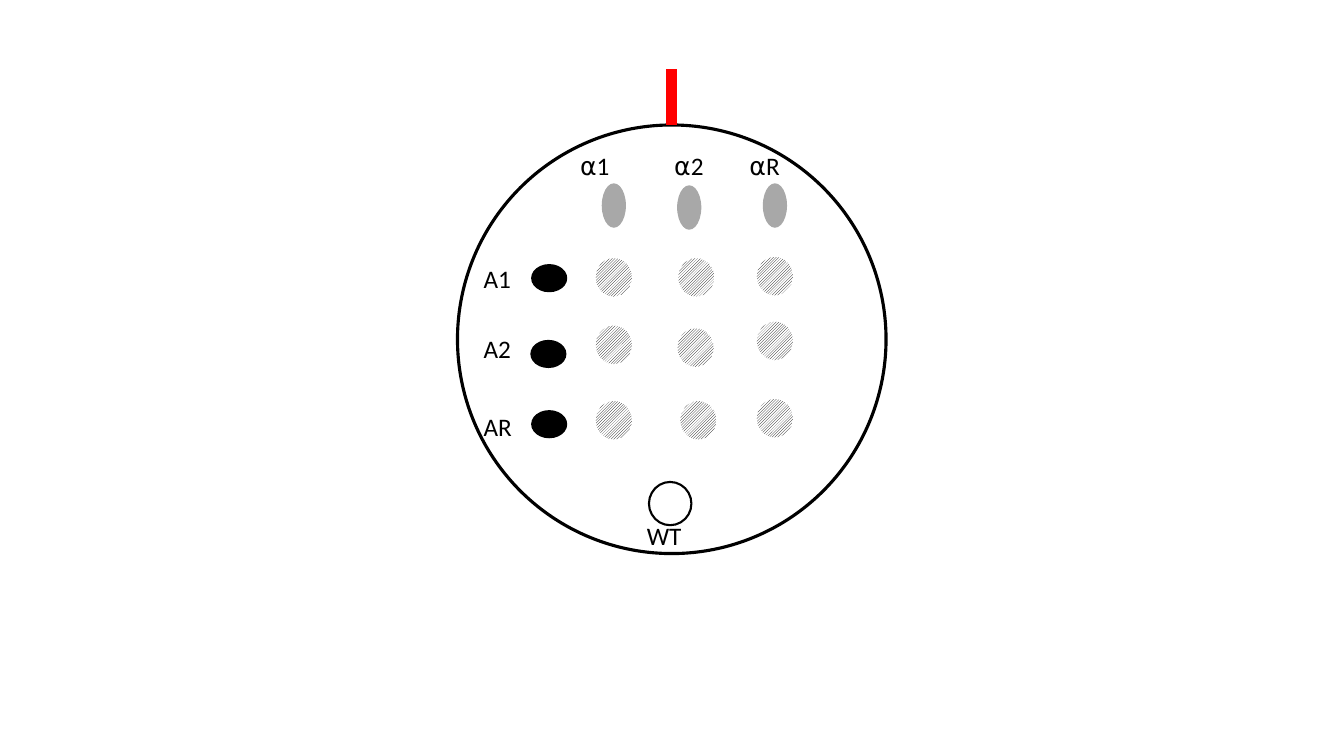
from dataclasses import dataclass

from lxml.etree import SubElement
from pptx import Presentation
from pptx.dml.color import RGBColor
from pptx.enum.dml import MSO_PATTERN
from pptx.enum.shapes import MSO_CONNECTOR, MSO_SHAPE
from pptx.enum.text import MSO_AUTO_SIZE, PP_ALIGN
from pptx.oxml.ns import qn
from pptx.util import Cm, Pt


@dataclass(frozen=True)
class Theme:
    ink: RGBColor = RGBColor(0, 0, 0)
    paper: RGBColor = RGBColor(255, 255, 255)
    mark: RGBColor = RGBColor(255, 0, 0)
    font: str = "Calibri"
    label: Pt = Pt(18)
    plate_line: Pt = Pt(2.25)
    spot_line: Pt = Pt(1.5)
    mark_line: Pt = Pt(7.75)


class PlateSlide:
    """Draws spots by their centres and labels by their corners, in cm."""

    def __init__(self, slide, theme):
        self.slide, self.theme = slide, theme

    def oval(self, center, size, line=None):
        (cx, cy), (w, h) = center, size
        sp = self.slide.shapes.add_shape(
            MSO_SHAPE.OVAL, Cm(cx - w / 2), Cm(cy - h / 2), Cm(w), Cm(h))
        sp.shadow.inherit = False
        sp.fill.background()
        if line is None:
            sp.line.fill.background()
        else:
            sp.line.color.rgb = self.theme.ink
            sp.line.width = line
        return sp

    def solid_oval(self, center, size, opacity=100):
        sp = self.oval(center, size)
        sp.fill.solid()
        sp.fill.fore_color.rgb = self.theme.ink
        if opacity < 100:
            color = sp.fill._xPr.find(qn("a:solidFill"))[0]
            SubElement(color, qn("a:alpha"), val=str(opacity * 1000))
        return sp

    def hatched_oval(self, center, size):
        sp = self.oval(center, size)
        sp.fill.patterned()
        sp.fill.pattern = MSO_PATTERN.LIGHT_UPWARD_DIAGONAL
        sp.fill.fore_color.rgb = self.theme.ink
        sp.fill.back_color.rgb = self.theme.paper

    def label(self, text, left, top, width, align=PP_ALIGN.LEFT):
        sp = self.slide.shapes.add_textbox(Cm(left), Cm(top), Cm(width), Cm(1.24))
        tf = sp.text_frame
        tf.word_wrap = True
        tf.auto_size = MSO_AUTO_SIZE.SHAPE_TO_FIT_TEXT
        p = tf.paragraphs[0]
        p.alignment = align
        r = p.add_run()
        r.text = text
        r.font.name = self.theme.font
        r.font.size = self.theme.label
        r.font.color.rgb = self.theme.ink

    def mark_above(self, sp, length):
        """Draw the orientation mark down to the top of a shape."""
        x = sp.left + sp.width // 2
        line = self.slide.shapes.add_connector(
            MSO_CONNECTOR.STRAIGHT, x, sp.top - Cm(length), x, sp.top)
        line.end_connect(sp, 0)
        line.line.color.rgb = self.theme.mark
        line.line.width = self.theme.mark_line
        SubElement(line._element.spPr, qn("a:effectLst"))


# text, label centre x, label width, spot centre
ALPHA_COLUMNS = [
    ("⍺1", 14.99, 1.78, (15.47, 5.18)),
    ("⍺2", 17.36, 2.11, (17.37, 5.23)),
    ("⍺R", 19.27, 2.11, (19.53, 5.18)),
]
# text, label top, spot centre, centres of the hatched spots
A_ROWS = [
    ("A1", 6.5, (13.84, 7.01), [(15.47, 6.99), (17.55, 6.99), (19.53, 6.96)]),
    ("A2", 8.28, (13.82, 8.92), [(15.47, 8.69), (17.53, 8.76), (19.53, 8.59)]),
    ("AR", 10.24, (13.84, 10.69), [(15.47, 10.59), (17.6, 10.59), (19.53, 10.54)]),
]
LABEL_WIDTH = 1.91


def main():
    prs = Presentation()
    prs.slide_width, prs.slide_height = Cm(33.87), Cm(19.05)
    theme = Theme()
    s = PlateSlide(prs.slides.add_slide(prs.slide_layouts[6]), theme)

    plate = s.oval((16.93, 8.55), (10.8, 10.8), theme.plate_line)

    for text, center_x, width, spot in ALPHA_COLUMNS:
        s.label(text, center_x - width / 2, 3.66, width, PP_ALIGN.CENTER)
        s.solid_oval(spot, (0.61, 1.12), opacity=34)

    for text, top, spot, crosses in A_ROWS:
        s.label(text, 11.94, top, LABEL_WIDTH)
        s.solid_oval(spot, (0.71, 0.91)).rotation = 90
        for cross in crosses:
            s.hatched_oval(cross, (0.91, 0.97))

    s.oval((16.89, 12.69), (1.07, 1.09), theme.spot_line)
    s.label("WT", 16.05, 12.98, LABEL_WIDTH)
    s.mark_above(plate, 1.4)

    prs.save("out.pptx")


if __name__ == "__main__":
    main()
